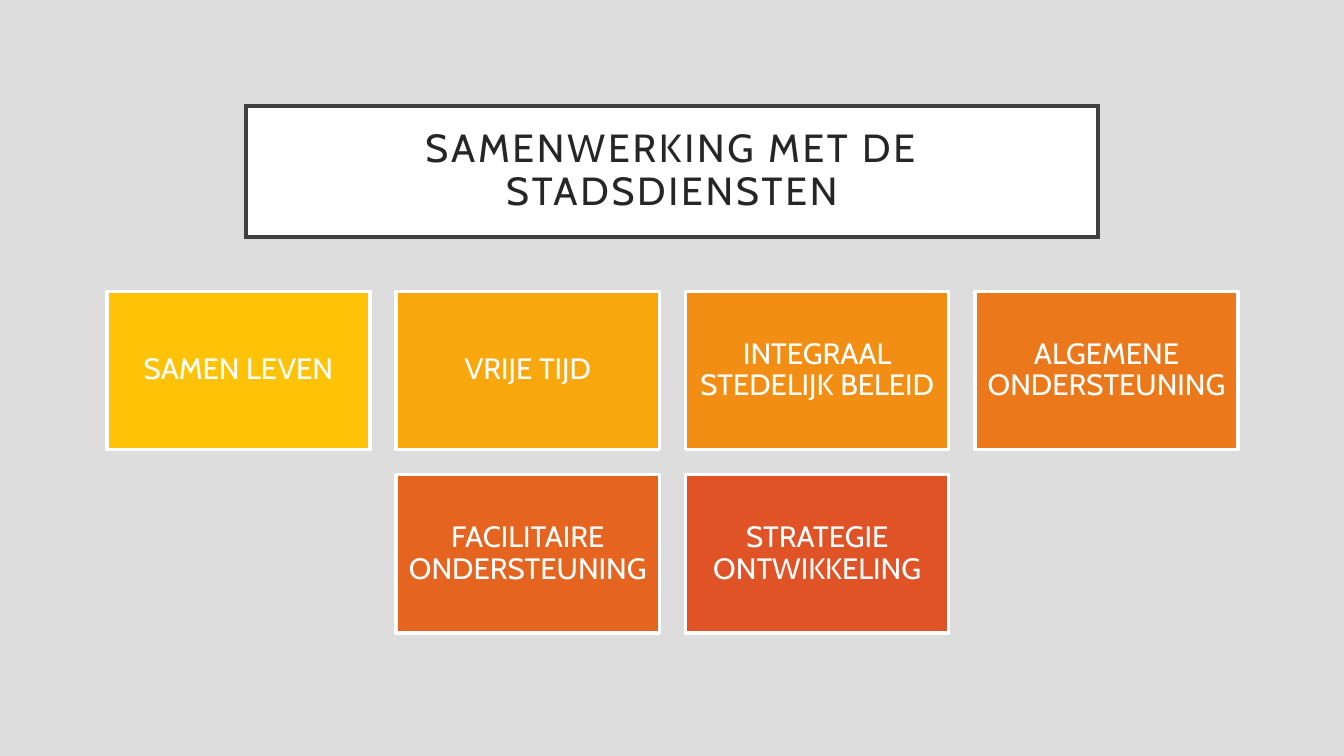
from lxml import etree
from pptx import Presentation
from pptx import util as u
from pptx.dml.color import RGBColor
from pptx.enum import shapes, text
from pptx.oxml import ns

THEME = {
    "background": "DDDDDD",
    "white": "FFFFFF",
    "title_line": "404040",
    "title_text": "262626",
    "font": "Cabin",
    "title_size": 28,
    "tile_size": 21,
    "line_width": 2.5,
}

presentation = Presentation()
presentation.slide_width, presentation.slide_height = u.Inches(13.33), u.Inches(7.5)
slide = presentation.slides.add_slide(presentation.slide_layouts[6])
slide.background.fill.solid()
slide.background.fill.fore_color.rgb = RGBColor.from_string(THEME["background"])


def add_box(label, place, fill, line, color, size, inset):
    """Add a bordered rectangle with centred text; place is left, top, width, height in inches."""
    box = slide.shapes.add_shape(
        shapes.MSO_SHAPE.RECTANGLE, *[u.Inches(length) for length in place])
    box.shadow.inherit = False
    box.fill.solid()
    box.fill.fore_color.rgb = RGBColor.from_string(fill)
    box.line.color.rgb = RGBColor.from_string(line)
    box.line.width = u.Pt(THEME["line_width"])

    frame = box.text_frame
    frame_format = {"word_wrap": True, "vertical_anchor": text.MSO_ANCHOR.MIDDLE}
    for side in ("left", "top", "right", "bottom"):
        frame_format[f"margin_{side}"] = u.Inches(inset)
    for name, value in frame_format.items():
        setattr(frame, name, value)

    paragraph = frame.paragraphs[0]
    paragraph.alignment = text.PP_ALIGN.CENTER
    paragraph.line_spacing = 0.9
    run = paragraph.add_run()
    run.text = label
    for name, value in {"name": THEME["font"], "size": u.Pt(size)}.items():
        setattr(run.font, name, value)
    run.font.color.rgb = RGBColor.from_string(color)
    return box


title = add_box("SAMENWERKING MET DE STADSDIENSTEN", (2.44, 1.05, 8.45, 1.3),
                THEME["white"], THEME["title_line"], THEME["title_text"],
                THEME["title_size"], 0.2)
# Letter spacing of 2 pt and square border corners
title.element.find(".//" + ns.qn("a:rPr")).set("spc", "200")
title_border = title.element.find(".//" + ns.qn("a:ln"))
etree.SubElement(title_border, ns.qn("a:miter"), lim="800000")

# Each row of tiles is centred on the full grid
service_rows = [
    [("SAMEN LEVEN", "FEC306"), ("VRIJE TIJD", "F8A70D"),
     ("INTEGRAAL STEDELIJK BELEID", "F28E13"), ("ALGEMENE ONDERSTEUNING", "EB781A")],
    [("FACILITAIRE ONDERSTEUNING", "E56420"), ("STRATEGIE ONTWIKKELING", "DF5327")],
]
columns = 4
grid_left, grid_top = 1.06, 2.89
tile_width, tile_height = 2.61, 1.57
column_step, row_step = 2.87, 1.82

for row, services in enumerate(service_rows):
    first_column = (columns - len(services)) / 2
    for column, (service, fill) in enumerate(services, start=int(first_column)):
        place = (grid_left + column * column_step, grid_top + row * row_step,
                 tile_width, tile_height)
        add_box(service, place, fill, THEME["white"], THEME["white"],
                THEME["tile_size"], 0.09)

presentation.save("out.pptx")
